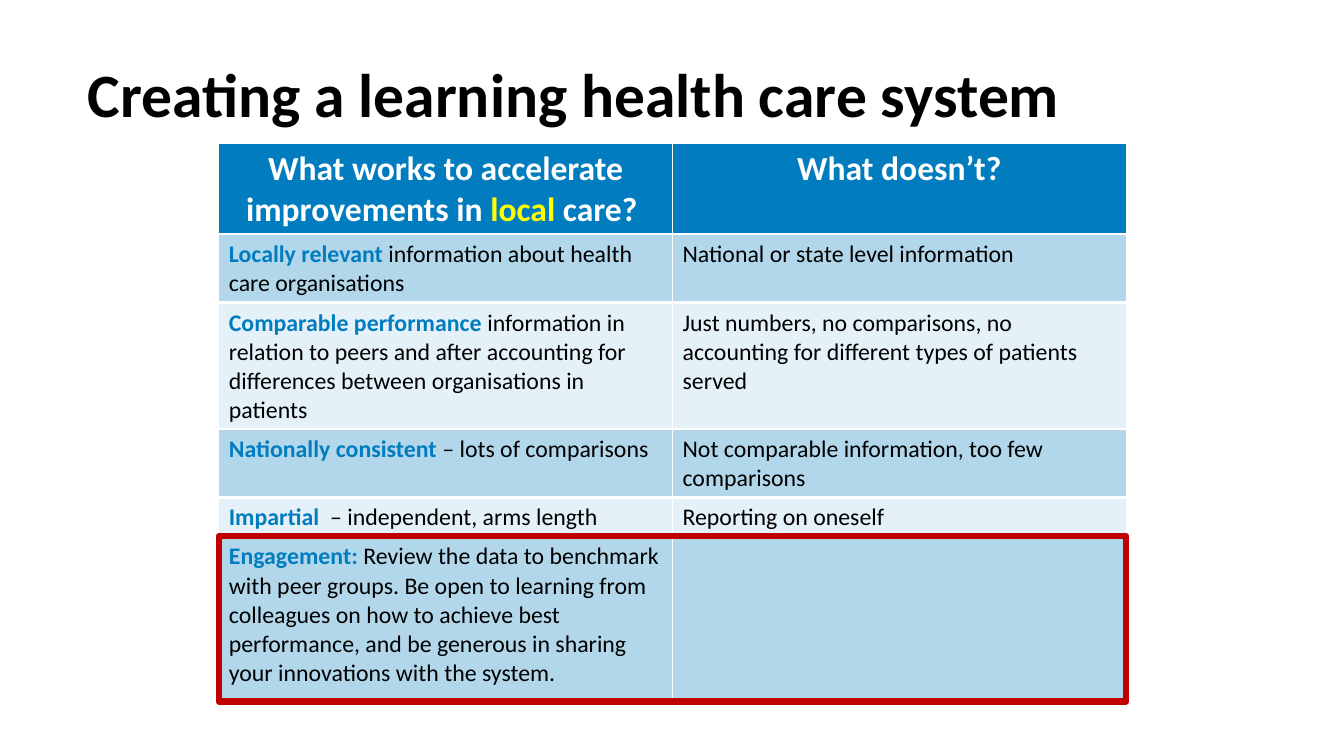
from dataclasses import dataclass

from lxml.etree import SubElement
from pptx import Presentation
from pptx.dml.color import RGBColor
from pptx.enum.shapes import MSO_SHAPE
from pptx.enum.text import MSO_ANCHOR, PP_ALIGN
from pptx.oxml.ns import qn
from pptx.util import Emu, Pt


@dataclass(frozen=True)
class Theme:
    font: str = "Calibri"
    black: str = "000000"
    white: str = "FFFFFF"
    blue: str = "007CBF"
    yellow: str = "FFFF00"
    red: str = "C00000"
    title: int = 44
    head: int = 24
    body: int = 17
    frame: float = 4.5


THEME = Theme()
TITLE = "Creating a learning health care system"
HEAD = (
    [("What works to accelerate improvements in ", THEME.white),
     ("local ", THEME.yellow), ("care? ", THEME.white)],
    [("What doesn’t?", THEME.white)],
)
# top, row height, drawn height, key words, what works, what doesn't
ROWS = [
    (233, 66, 67, "Locally relevant ",
     "information about health care organisations",
     "National or state level information"),
    (301, 121, 123, "Comparable performance ",
     "information in relation to peers and after accounting for "
     "differences between organisations in patients",
     "Just numbers, no comparisons, no accounting for different types "
     "of patients served"),
    (426, 66, 67, "Nationally consistent ", "– lots of comparisons",
     "Not comparable information, too few comparisons"),
    (494, 38, 67, "Impartial  ", "– independent, arms length",
     "Reporting on oneself"),
    (533, 163, 163, "Engagement: ",
     "Review the data to benchmark with peer groups. Be open to learning "
     "from colleagues on how to achieve best performance, and be generous "
     "in sharing your innovations with the system.", ""),
]
LEFT, WIDE = 217, 900
TINTS = (30, 10)  # percent opacity, by turns
EDGES = (("L", 1), ("R", 1), ("T", 1), ("B", 3))


def px(num):
    """Turn px, 100 to the inch, into EMU."""
    return Emu(num * 9144)


def rgb(code):
    return RGBColor.from_string(code)


def write(para, text, *, size, color=THEME.black, bold=False, align=None):
    if align is not None:
        para.alignment = align
    run = para.add_run()
    run.text = text
    font = run.font
    font.name, font.size, font.bold = THEME.font, Pt(size), bold
    font.color.rgb = rgb(color)


def paint(cell, tint):
    """Fill a cell at a percent opacity and draw its white edges."""
    cell.fill.solid()
    cell.fill.fore_color.rgb = rgb(THEME.blue)
    props = cell._tc.get_or_add_tcPr()
    if tint < 100:
        hue = props.find(qn("a:solidFill"))[0]
        SubElement(hue, qn("a:alpha"), val=str(tint * 1000))
    for spot, (side, width) in enumerate(EDGES):
        line = SubElement(props, qn(f"a:ln{side}"), w=str(Pt(width)))
        fill = SubElement(line, qn("a:solidFill"))
        SubElement(fill, qn("a:srgbClr"), val=THEME.white)
        props.insert(spot, line)


def add_band(slide, top, row, tall, tint):
    """Add a table of one row and return its two cells."""
    frame = slide.shapes.add_table(1, 2, px(LEFT), px(top), px(WIDE), px(row))
    frame.table.rows[0].height = px(row)
    frame.height = px(tall)
    cells = list(frame.table.rows[0].cells)
    for cell in cells:
        paint(cell, tint)
    return cells


def add_head(slide):
    for cell, parts in zip(add_band(slide, 142, 89, 90, 100), HEAD):
        para = cell.text_frame.paragraphs[0]
        for text, color in parts:
            write(para, text, size=THEME.head, color=color, bold=True,
                  align=PP_ALIGN.CENTER)


def add_rows(slide):
    for num, (top, row, tall, key, works, fails) in enumerate(ROWS):
        cells = add_band(slide, top, row, tall, TINTS[num % 2])
        good, bad = (cell.text_frame.paragraphs[0] for cell in cells)
        write(good, key, size=THEME.body, color=THEME.blue, bold=True)
        write(good, works, size=THEME.body)
        if fails:
            write(bad, fails, size=THEME.body)


def add_title(slide):
    box = slide.shapes.add_textbox(px(77), px(24), px(1150), px(145))
    body = box.text_frame
    body.word_wrap = True
    body.vertical_anchor = MSO_ANCHOR.MIDDLE
    para = body.paragraphs[0]
    para.line_spacing = 0.9
    write(para, TITLE, size=THEME.title, bold=True)


def add_frame(slide):
    frame = slide.shapes.add_shape(
        MSO_SHAPE.RECTANGLE, px(LEFT), px(532), px(WIDE), px(164))
    frame.shadow.inherit = False
    frame.fill.background()
    frame.line.color.rgb = rgb(THEME.red)
    frame.line.width = Pt(THEME.frame)


def main():
    deck = Presentation()
    deck.slide_width, deck.slide_height = px(1333), px(750)
    slide = deck.slides.add_slide(deck.slide_layouts[6])
    add_head(slide)
    add_rows(slide)
    add_title(slide)
    add_frame(slide)
    deck.save("out.pptx")


if __name__ == "__main__":
    main()
